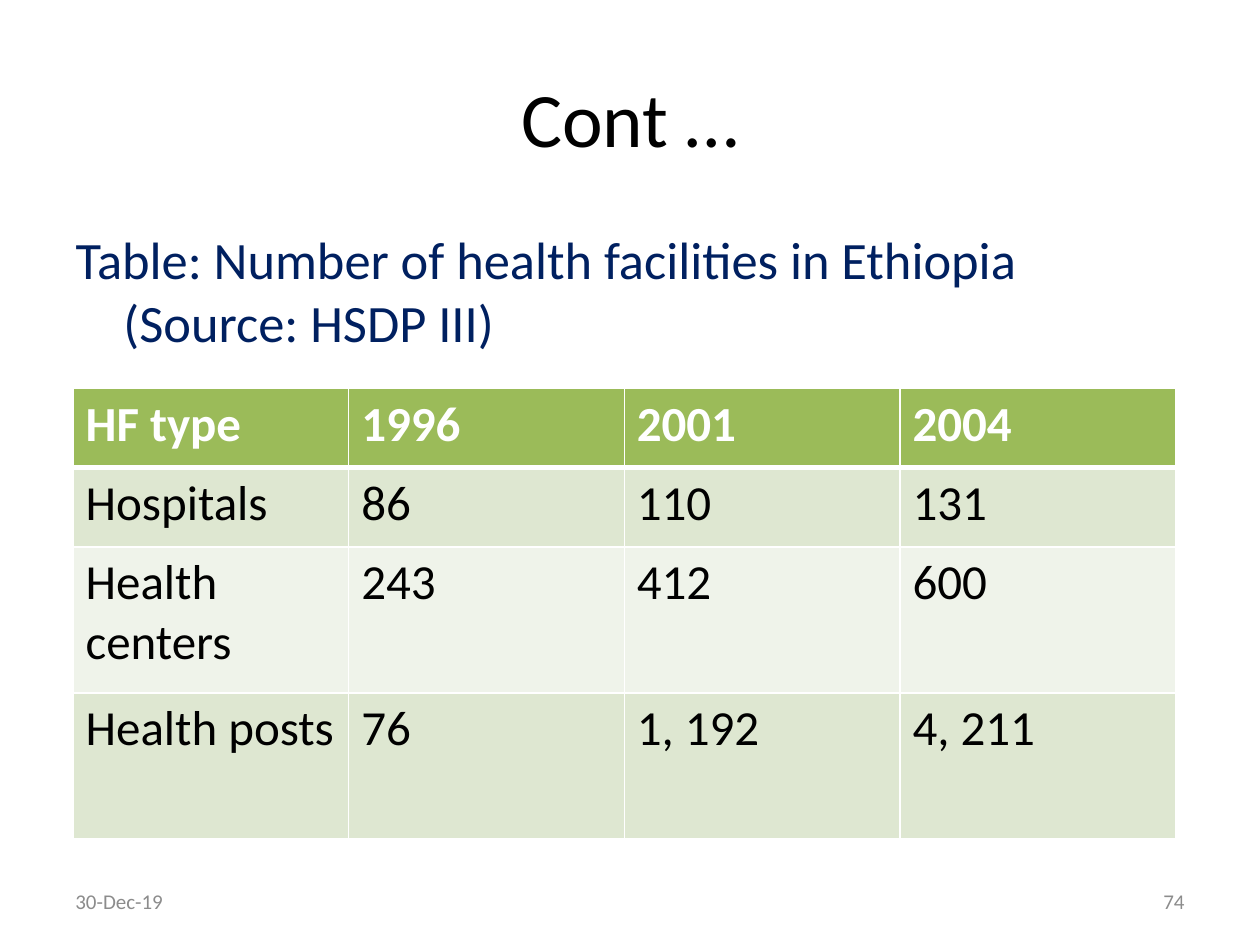
from lxml.etree import SubElement
from pptx import Presentation
from pptx.dml.color import RGBColor
from pptx.enum.text import MSO_ANCHOR, PP_ALIGN
from pptx.oxml.ns import qn
from pptx.util import Inches, Pt

FONT = "Calibri"
BLACK = RGBColor(0x00, 0x00, 0x00)
WHITE = RGBColor(0xFF, 0xFF, 0xFF)
NAVY = RGBColor(0x00, 0x20, 0x60)
GRAY = RGBColor(0x8C, 0x8C, 0x8C)
GREEN = RGBColor(0x9B, 0xBB, 0x59)
BANDS = RGBColor(0xDE, 0xE7, 0xD1), RGBColor(0xEF, 0xF3, 0xEA)

ROWS = [
    ["HF type", "1996", "2001", "2004"],
    ["Hospitals", "86", "110", "131"],
    ["Health centers", "243", "412", "600"],
    ["Health posts", "76", "1, 192", "4, 211"],
]
HEIGHTS = [0.63, 0.63, 1.16, 1.16]


def write(frame, text, size, color=BLACK, bold=False, align=PP_ALIGN.LEFT,
          anchor=None):
    frame.word_wrap = True
    if anchor is not None:
        frame.vertical_anchor = anchor
    para = frame.paragraphs[0]
    para.alignment = align
    para.space_before = Pt(0)
    run = para.add_run()
    run.text = text
    font = run.font
    font.name, font.size, font.bold = FONT, Pt(size), bold
    font.color.rgb = color


def place(shape, box):
    shape.left, shape.top, shape.width, shape.height = map(Inches, box)


def add_title(slide, box):
    title = slide.shapes.title
    place(title, box)
    write(title.text_frame, "Cont …", 44, align=PP_ALIGN.CENTER,
          anchor=MSO_ANCHOR.MIDDLE)


def add_body(slide, box):
    """Fill the body with the table caption, as a hanging line with no bullet."""
    body = slide.placeholders[1]
    place(body, box)
    frame = body.text_frame
    props = frame.paragraphs[0]._p.get_or_add_pPr()
    props.set("marL", str(Inches(0.38)))
    props.set("indent", str(Inches(-0.38)))
    SubElement(props, qn("a:buNone"))
    write(frame, "Table: Number of health facilities in Ethiopia "
          "(Source: HSDP III)", 30, NAVY)


def add_borders(cell, low):
    """Draw white cell edges; low is the width of the bottom one in points."""
    props = cell._tc.get_or_add_tcPr()
    for side, width in (("L", 1), ("R", 1), ("T", 1), ("B", low)):
        line = SubElement(props, qn(f"a:ln{side}"), w=str(Pt(width)))
        fill = SubElement(line, qn("a:solidFill"))
        SubElement(fill, qn("a:srgbClr"), val=str(WHITE))


def add_grid(slide, box):
    table = slide.shapes.add_table(len(ROWS), len(ROWS[0]),
                                   *map(Inches, box)).table
    for col in table.columns:
        col.width = Inches(box[2] / len(ROWS[0]))
    for r, (row, high) in enumerate(zip(ROWS, HEIGHTS)):
        table.rows[r].height = Inches(high)
        head = r == 0
        for c, text in enumerate(row):
            cell = table.cell(r, c)
            add_borders(cell, 3 if head else 1)
            cell.fill.solid()
            cell.fill.fore_color.rgb = GREEN if head else BANDS[(r - 1) % 2]
            write(cell.text_frame, text, 28, WHITE if head else BLACK, head)


def add_footer(slide, box):
    """Put the date at the left end of the box and the number at the right."""
    left, top, width, height = box
    part = 2.33
    for x, text, align in ((left, "30-Dec-19", PP_ALIGN.LEFT),
                           (left + width - part, "74", PP_ALIGN.RIGHT)):
        note = slide.shapes.add_textbox(*map(Inches, (x, top, part, height)))
        write(note.text_frame, text, 12, GRAY, align=align,
              anchor=MSO_ANCHOR.MIDDLE)


def main():
    deck = Presentation()
    deck.slide_width, deck.slide_height = Inches(10), Inches(7.5)
    slide = deck.slides.add_slide(deck.slide_layouts[1])
    add_title(slide, (0.5, 0.3, 9, 1.25))
    add_body(slide, (0.5, 1.75, 9, 4.95))
    add_grid(slide, (0.58, 3.08, 8.75, sum(HEIGHTS)))
    add_footer(slide, (0.5, 6.95, 9, 0.4))
    deck.save("out.pptx")


if __name__ == "__main__":
    main()
